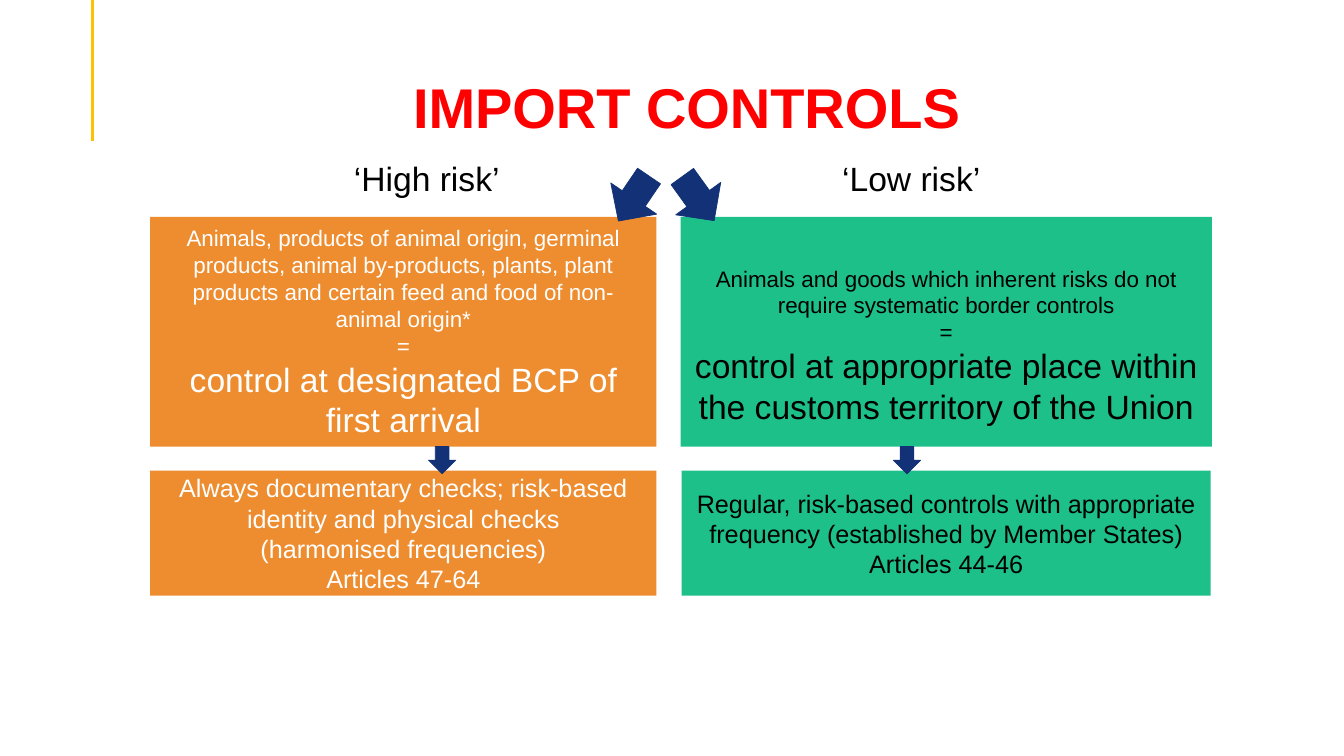
from pptx import Presentation
from pptx.dml.color import RGBColor
from pptx.enum.shapes import MSO_CONNECTOR, MSO_SHAPE
from pptx.enum.text import MSO_ANCHOR, MSO_AUTO_SIZE, PP_ALIGN
from pptx.oxml.ns import qn
from pptx.util import Inches, Pt
from lxml.etree import SubElement

RED = RGBColor(0xFF, 0x00, 0x00)
GOLD = RGBColor(0xFF, 0xC0, 0x00)
ORANGE = RGBColor(0xED, 0x8D, 0x2F)
GREEN = RGBColor(0x1E, 0xC0, 0x8A)
NAVY = RGBColor(0x13, 0x31, 0x76)
WHITE = RGBColor(0xFF, 0xFF, 0xFF)
BLACK = RGBColor(0x00, 0x00, 0x00)


class ControlsSlide:
    """Draws on one slide; every place and size is a percentage of the slide."""

    FONT = "Arial"

    def __init__(self, deck):
        self.width, self.height = deck.slide_width, deck.slide_height
        self.slide = deck.slides.add_slide(deck.slide_layouts[5])

    def place(self, left, top, width, height):
        return (round(self.width * left / 100), round(self.height * top / 100),
                round(self.width * width / 100), round(self.height * height / 100))

    def set_lines(self, frame, lines, color, bold=False, **frame_format):
        """Fill a text frame with (text, size) lines."""
        settings = {"word_wrap": True, "auto_size": MSO_AUTO_SIZE.NONE,
                    "vertical_anchor": MSO_ANCHOR.MIDDLE, **frame_format}
        for name, value in settings.items():
            setattr(frame, name, value)
        for index, (text, size) in enumerate(lines):
            paragraph = frame.add_paragraph() if index else frame.paragraphs[0]
            paragraph.text = text
            paragraph.alignment = PP_ALIGN.CENTER
            font = paragraph.font
            for name, value in {"name": self.FONT, "size": Pt(size), "bold": bold}.items():
                setattr(font, name, value)
            font.color.rgb = color

    def title(self, text, box):
        title = self.slide.shapes.title
        title.left, title.top, title.width, title.height = self.place(*box)
        self.set_lines(title.text_frame, [(text, 40)], RED, bold=True,
                       vertical_anchor=MSO_ANCHOR.BOTTOM, margin_bottom=0)
        title.text_frame.paragraphs[0].line_spacing = 0.9

    def accent_line(self, x, bottom):
        left, _, _, end = self.place(x, 0, 0, bottom)
        line = self.slide.shapes.add_connector(MSO_CONNECTOR.STRAIGHT, left, 0, left, end)
        line.line.color.rgb = GOLD
        line.line.width = Pt(2.25)
        SubElement(line._element.spPr, qn("a:effectLst"))

    def label(self, text, box):
        label = self.slide.shapes.add_textbox(*self.place(*box))
        self.set_lines(label.text_frame, [(text, 24)], BLACK)

    def panel(self, lines, box, fill, color, **frame_format):
        panel = self.slide.shapes.add_shape(MSO_SHAPE.RECTANGLE, *self.place(*box))
        panel.shadow.inherit = False
        panel.fill.solid()
        panel.fill.fore_color.rgb = fill
        panel.line.fill.background()
        self.set_lines(panel.text_frame, lines, color, **frame_format)

    def arrow(self, box, rotation=0):
        arrow = self.slide.shapes.add_shape(MSO_SHAPE.DOWN_ARROW, *self.place(*box))
        arrow.shadow.inherit = False
        arrow.fill.solid()
        arrow.fill.fore_color.rgb = NAVY
        arrow.line.color.rgb = NAVY
        arrow.line.width = Pt(0.5)
        arrow.rotation = rotation


def main():
    deck = Presentation()
    deck.slide_width, deck.slide_height = Inches(13.33), Inches(7.5)
    page = ControlsSlide(deck)
    page.accent_line(6.9, 18.67)
    page.title("IMPORT CONTROLS", (7.95, 7.07, 86.27, 11.47))

    scope_row = (28.67, 30.4)
    checks_row = (62.27, 16.53)

    high_scope = [
        ("Animals, products of animal origin, germinal products, animal by-products, "
         "plants, plant products and certain feed and food of non-animal origin*", 16),
        ("=", 16),
        ("control at designated BCP of first arrival", 24),
    ]
    high_checks = [
        ("Always documentary checks; risk-based identity and physical checks", 18),
        ("(harmonised frequencies)", 18),
        ("Articles 47-64", 18),
    ]
    low_scope = [
        ("Animals and goods which inherent risks do not require systematic border controls", 16),
        ("=", 16),
        ("control at appropriate place within the customs territory of the Union", 24),
    ]
    low_checks = [
        ("Regular, risk-based controls with appropriate frequency "
         "(established by Member States)", 18),
        ("Articles 44-46", 18),
    ]

    def panel_box(left, width, row):
        top, height = row
        return left, top, width, height

    page.panel(high_scope, panel_box(11.18, 37.66, scope_row), ORANGE, WHITE)
    page.panel(high_checks, panel_box(11.18, 37.66, checks_row), ORANGE, WHITE)
    page.panel(low_scope, panel_box(50.64, 39.53, scope_row), GREEN, BLACK,
               margin_top=Inches(0.32))
    page.panel(low_checks, panel_box(50.71, 39.38, checks_row), GREEN, BLACK)

    for risk, label_left, split_left, rotation, down_left in (
        ("‘High risk’", 21.75, 45.09, 34.2, 31.88),
        ("‘Low risk’", 57.8, 49.89, 324.2, 66.47),
    ):
        page.label(risk, (label_left, 19.87, 20, 7.33))
        page.arrow((split_left, 22.67, 4.13, 7.2), rotation)
        page.arrow((down_left, 59.07, 2.03, 3.6))

    deck.save("out.pptx")


if __name__ == "__main__":
    main()
